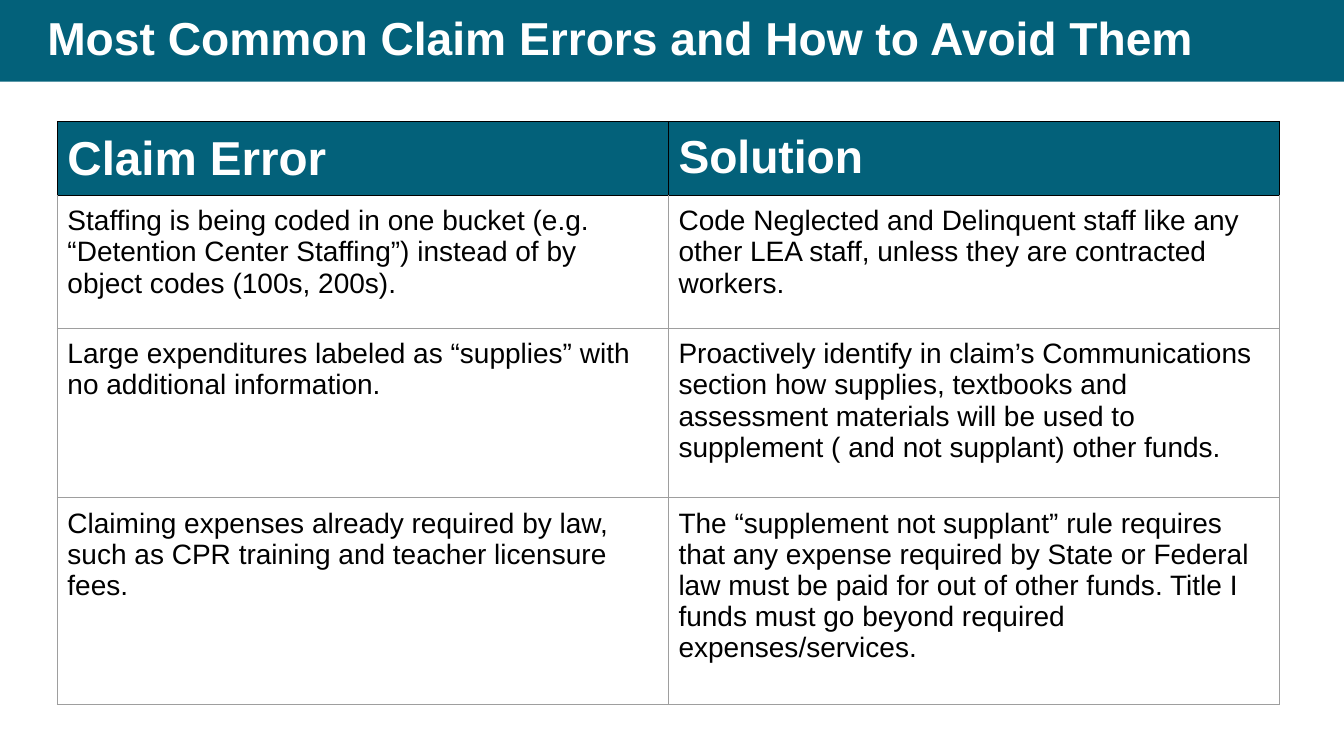
from lxml import etree
from pptx import Presentation
from pptx.dml.color import RGBColor
from pptx.enum.shapes import MSO_SHAPE
from pptx.enum.text import MSO_ANCHOR, MSO_AUTO_SIZE, PP_ALIGN
from pptx.oxml.ns import qn
from pptx.util import Pt

RECT = MSO_SHAPE.RECTANGLE
MIDDLE = MSO_ANCHOR.MIDDLE
TOP = MSO_ANCHOR.TOP
LEFT = PP_ALIGN.LEFT
FIXED = MSO_AUTO_SIZE.NONE

TEAL = RGBColor(0x03, 0x61, 0x7A)
WHITE = RGBColor(0xFF, 0xFF, 0xFF)
BLACK = RGBColor(0x00, 0x00, 0x00)
GRAY = RGBColor(0x9E, 0x9E, 0x9E)

WIDTH, HEIGHT = 960, 540
BAND = 58.3
ROWS = [
    ("Claim Error", "Solution"),
    ("Staffing is being coded in one bucket (e.g. “Detention Center Staffing”) "
     "instead of by object codes (100s, 200s).",
     "Code Neglected and Delinquent staff like any other LEA staff, "
     "unless they are contracted workers."),
    ("Large expenditures labeled as “supplies” with no additional information.",
     "Proactively identify in claim’s Communications section how supplies, "
     "textbooks and assessment materials will be used to supplement "
     "( and not supplant) other funds."),
    ("Claiming expenses already required by law, such as CPR training and "
     "teacher licensure fees.",
     "The “supplement not supplant” rule requires that any expense required by "
     "State or Federal law must be paid for out of other funds. Title I funds "
     "must go beyond required expenses/services."),
]
HEIGHTS = (48.2, 95, 121, 147.6)
HEADS = (34, 33)


class Deck:
    font = "Arial"
    inset = Pt(7.2)

    def __init__(self, show):
        self.slide = show.slides.add_slide(show.slide_layouts[5])

    def style(self, para, size, color, bold):
        para.alignment = LEFT
        para.font.name = self.font
        para.font.size = Pt(size)
        para.font.bold = bold
        para.font.color.rgb = color

    def title(self, text, left, top, width, height):
        title = self.slide.shapes.title
        title.left, title.top = Pt(left), Pt(top)
        title.width, title.height = Pt(width), Pt(height)
        frame = title.text_frame
        frame.text = text
        frame.word_wrap = True
        frame.auto_size = FIXED
        frame.vertical_anchor = MIDDLE
        frame.margin_left = frame.margin_right = self.inset
        frame.margin_top = frame.margin_bottom = Pt(3.6)
        para = frame.paragraphs[0]
        para.line_spacing = 0.9
        self.style(para, 33, WHITE, True)

    def band(self, width, height):
        band = self.slide.shapes.add_shape(RECT, 0, 0, Pt(width), Pt(height))
        band.shadow.inherit = False
        band.fill.solid()
        band.fill.fore_color.rgb = TEAL
        band.line.fill.background()
        self.slide.shapes.title.element.addprevious(band.element)

    def border(self, cell, side, color):
        props = cell._tc.get_or_add_tcPr()
        line = etree.SubElement(props, qn("a:ln" + side), w=str(Pt(0.75)))
        fill = etree.SubElement(line, qn("a:solidFill"))
        etree.SubElement(fill, qn("a:srgbClr"), val=str(color))

    def cell(self, cell, text, row, col):
        head = row == 0
        cell.text = text
        cell.vertical_anchor = TOP
        cell.margin_left = cell.margin_right = self.inset
        cell.margin_top = cell.margin_bottom = self.inset
        for side in "LRTB":
            dark = head or (row == 1 and side == "T")
            self.border(cell, side, BLACK if dark else GRAY)
        if head:
            cell.fill.solid()
            cell.fill.fore_color.rgb = TEAL
        else:
            cell.fill.background()
        size, color = (HEADS[col], WHITE) if head else (20, BLACK)
        self.style(cell.text_frame.paragraphs[0], size, color, head)

    def table(self, rows, heights, left, top, width):
        cols = len(rows[0])
        frame = self.slide.shapes.add_table(
            len(rows), cols, Pt(left), Pt(top), Pt(width), Pt(sum(heights)))
        table = frame.table
        table.first_row = table.horz_banding = False
        for col in table.columns:
            col.width = Pt(width / cols)
        for r, (texts, height) in enumerate(zip(rows, heights)):
            table.rows[r].height = Pt(height)
            for c, text in enumerate(texts):
                self.cell(table.cell(r, c), text, r, c)


def main():
    show = Presentation()
    show.slide_width, show.slide_height = Pt(WIDTH), Pt(HEIGHT)
    deck = Deck(show)
    deck.title("Most Common Claim Errors and How to Avoid Them",
               26.6, 0, 887, BAND)
    deck.band(WIDTH, BAND)
    deck.table(ROWS, HEIGHTS, 41, 87.1, 873)
    show.save("out.pptx")


if __name__ == "__main__":
    main()
